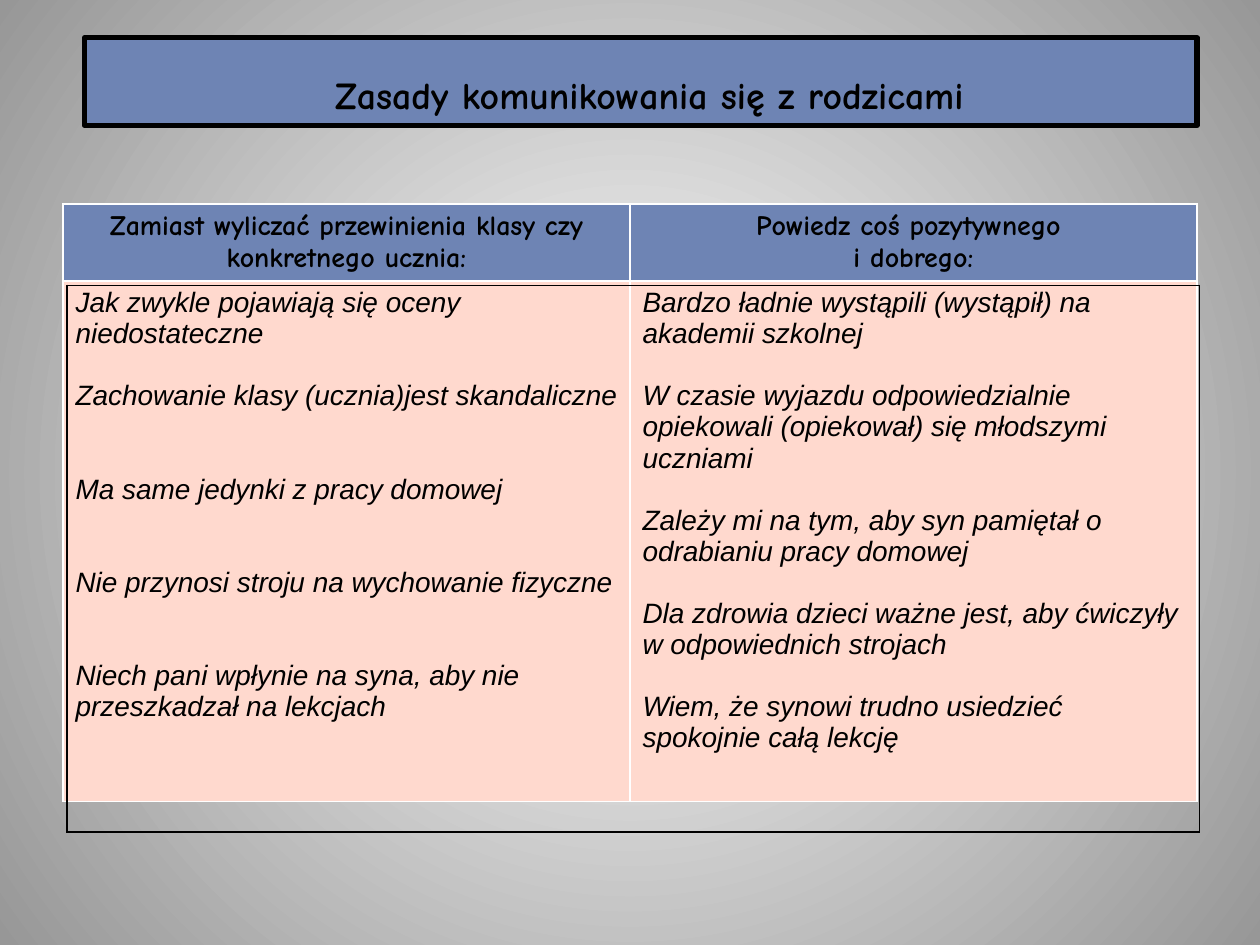
"""Build a slide that contrasts two ways of talking with parents."""
from lxml.etree import SubElement
from pptx import Presentation
from pptx.dml.color import RGBColor
from pptx.enum.text import MSO_ANCHOR, MSO_AUTO_SIZE, PP_ALIGN
from pptx.oxml import parse_xml
from pptx.oxml.ns import nsdecls, qn
from pptx.util import Inches, Pt

THEME = {
    "blue": "6E84B4", "peach": "FFD9CE", "black": "000000", "white": "FFFFFF", "grey": "979797",
    "title_size": 21.6, "text_size": 16, "line_pitch": 17.75,
    "heading_font": "Comic Neue", "body_font": "Arial",
}
HEADING = {"name": THEME["heading_font"], "size": Pt(THEME["text_size"]), "bold": True, "italic": False}
BODY = {"name": THEME["body_font"], "size": Pt(THEME["text_size"]), "bold": False, "italic": True}
TITLE = HEADING | {"size": Pt(THEME["title_size"])}


def write(frame, lines, font, alignment, gaps):
    """Fill a text frame; gaps counts the empty lines above each paragraph."""
    for index, (line, gap) in enumerate(zip(lines, gaps)):
        paragraph = frame.paragraphs[0] if index == 0 else frame.add_paragraph()
        paragraph.alignment = alignment
        paragraph.space_before = Pt(gap * THEME["line_pitch"])
        run = paragraph.add_run()
        run.text = line
        for name, value in font.items():
            setattr(run.font, name, value)
        run.font.color.rgb = RGBColor.from_string(THEME["black"])


def set_borders(cell, color):
    """Draw thin borders on all sides of a cell, or none without a color."""
    paint = f'<a:solidFill><a:srgbClr val="{THEME[color]}"/></a:solidFill>' if color else "<a:noFill/>"
    properties = cell._tc.get_or_add_tcPr()
    for index, side in enumerate("LRTB"):
        properties.insert(index, parse_xml(
            f'<a:ln{side} {nsdecls("a")} w="{Pt(1)}">{paint}</a:ln{side}>'))


presentation = Presentation()
presentation.slide_width, presentation.slide_height = Inches(10), Inches(7.5)
column, row = presentation.slide_width / 100, presentation.slide_height / 75
slide = presentation.slides.add_slide(presentation.slide_layouts[5])

background = slide.background.fill
background.gradient()
for stop, color in zip(background.gradient_stops, ("white", "grey")):
    stop.color.rgb = RGBColor.from_string(THEME[color])
gradient = slide._element.find(".//" + qn("a:gradFill"))
gradient.remove(gradient.find(qn("a:lin")))
circle = SubElement(gradient, qn("a:path"), {"path": "circle"})
SubElement(circle, qn("a:fillToRect"), dict.fromkeys("ltrb", "50000"))

title = slide.shapes.title
title.left, title.top = int(6.7 * column), int(3 * row)
title.width, title.height = int(88.3 * column), int(6.95 * row)
title.fill.solid()
title.fill.fore_color.rgb = RGBColor.from_string(THEME["blue"])
title.line.color.rgb = RGBColor.from_string(THEME["black"])
title.line.width = Pt(3)
frame_format = {"vertical_anchor": MSO_ANCHOR.BOTTOM, "auto_size": MSO_AUTO_SIZE.NONE, "word_wrap": True,
                "margin_left": int(2.4 * column), "margin_bottom": int(0.65 * row)}
for name, value in frame_format.items():
    setattr(title.text_frame, name, value)
write(title.text_frame, ["Zasady komunikowania się z rodzicami"], TITLE, PP_ALIGN.CENTER, [0])

headers = [
    ["Zamiast wyliczać przewinienia klasy czy konkretnego ucznia:"],
    ["Powiedz coś pozytywnego ", "i dobrego:"],
]
examples = [
    ["Jak zwykle pojawiają się oceny niedostateczne",
     "Zachowanie klasy (ucznia)jest skandaliczne",
     "Ma same jedynki z pracy domowej",
     "Nie przynosi stroju na wychowanie fizyczne",
     "Niech pani wpłynie na syna, aby nie przeszkadzał na lekcjach"],
    ["Bardzo ładnie wystąpili (wystąpił) na akademii szkolnej",
     "W czasie wyjazdu odpowiedzialnie opiekowali (opiekował) się młodszymi uczniami",
     "Zależy mi na tym, aby syn pamiętał o odrabianiu pracy domowej",
     "Dla zdrowia dzieci ważne jest, aby ćwiczyły w odpowiednich strojach",
     "Wiem, że synowi trudno usiedzieć spokojnie całą lekcję"],
]
example_gaps = [(0, 1, 2, 2, 2), (0, 1, 1, 1, 1)]
table_rows = [
    (6.1, headers, HEADING, PP_ALIGN.CENTER, [(0, 0)] * 2, "blue"),
    (41.3, examples, BODY, PP_ALIGN.LEFT, example_gaps, "peach"),
]
table = slide.shapes.add_table(2, 2, int(5 * column), int(16.2 * row), int(90 * column), int(47.4 * row)).table
for row_index, (height, texts, font, alignment, gaps, fill) in enumerate(table_rows):
    table.rows[row_index].height = int(height * row)
    for column_index, lines in enumerate(texts):
        cell = table.cell(row_index, column_index)
        write(cell.text_frame, lines, font, alignment, gaps[column_index])
        cell.fill.solid()
        cell.fill.fore_color.rgb = RGBColor.from_string(THEME[fill])
        set_borders(cell, "white")

empty_tables = [(5.1, 23.3, 89.8, 4.7, None), (5.3, 22.65, 89.9, 43.4, "black")]
for left, top, width, height, border in empty_tables:
    empty_table = slide.shapes.add_table(
        1, 1, int(left * column), int(top * row), int(width * column), int(height * row)).table
    empty_table.first_row = empty_table.horz_banding = False
    empty_table.cell(0, 0).fill.background()
    set_borders(empty_table.cell(0, 0), border)

presentation.save("out.pptx")
